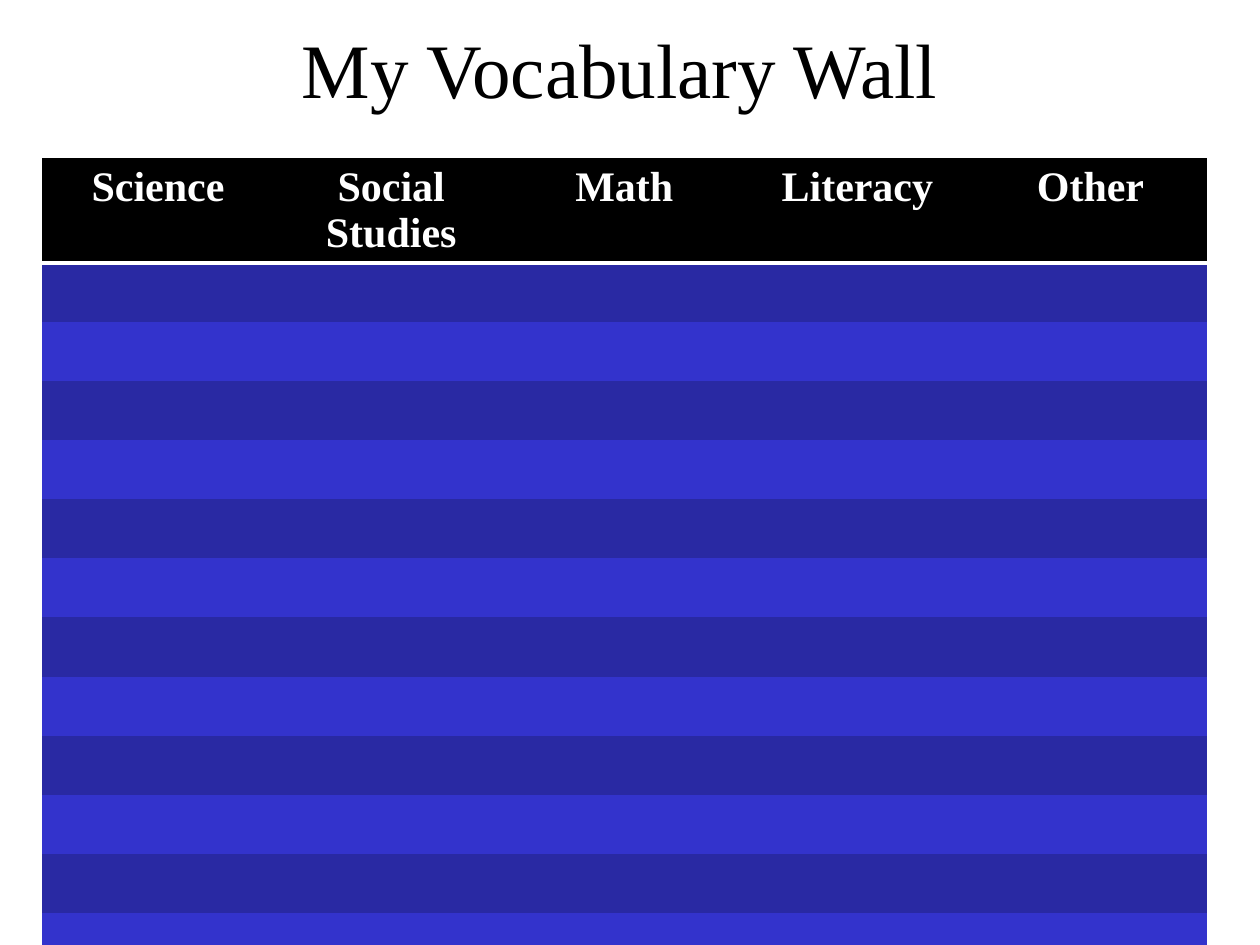
from lxml import etree
from pptx import Presentation
from pptx.dml.color import RGBColor
from pptx.enum import text
from pptx.oxml import ns
from pptx.util import Inches, Pt

BLACK = RGBColor(0x00, 0x00, 0x00)
WHITE = RGBColor(0xFF, 0xFF, 0xFF)
DARK_BLUE = RGBColor(0x29, 0x29, 0xA3)
BLUE = RGBColor(0x33, 0x33, 0xCC)
FONT = "Times New Roman"
NO_STYLE = "{2D5ABB26-0587-4C30-8999-92F81FD0307C}"
SUBJECTS = ["Science", "Social Studies", "Math", "Literacy", "Other"]
ROWS = 15


def write(frame, words, size=24, color=BLACK, bold=False):
    para = frame.paragraphs[0]
    para.alignment = text.PP_ALIGN.CENTER
    span = para.add_run()
    span.text = words
    span.font.name = FONT
    span.font.size = Pt(size)
    span.font.bold = bold
    span.font.color.rgb = color


deck = Presentation()
deck.slide_width, deck.slide_height = Inches(10), Inches(7.5)
page = deck.slides.add_slide(deck.slide_layouts[5])

# Title
title = page.shapes.title
title.left, title.top = Inches(0.67), Inches(0)
title.width, title.height = Inches(8.5), Inches(1.08)
title.text_frame.vertical_anchor = text.MSO_ANCHOR.MIDDLE
write(title.text_frame, "My Vocabulary Wall", size=44)

# Vocabulary table without a built-in style
frame = page.shapes.add_table(ROWS, len(SUBJECTS), Inches(0.33), Inches(1.25),
                              Inches(9.25), Inches(6))
table = frame.table
table.horz_banding = False
frame._element.find(".//" + ns.qn("a:tableStyleId")).text = NO_STYLE
for column in table.columns:
    column.width = Inches(1.85)
for row in table.rows:
    row.height = Inches(0.39)

# Header row with a white rule below
for cell, subject in zip(table.rows[0].cells, SUBJECTS):
    cell.fill.solid()
    cell.fill.fore_color.rgb = BLACK
    write(cell.text_frame, subject, color=WHITE, bold=True)
    rule = etree.Element(ns.qn("a:lnB"), w=str(Pt(2)))
    fill = etree.SubElement(rule, ns.qn("a:solidFill"))
    etree.SubElement(fill, ns.qn("a:srgbClr"), val=str(WHITE))
    cell._tc.get_or_add_tcPr().insert(0, rule)

# Empty rows in alternating blues, sized for 24 pt entries
for number in range(1, ROWS):
    for cell in table.rows[number].cells:
        cell.fill.solid()
        cell.fill.fore_color.rgb = DARK_BLUE if number % 2 else BLUE
        para = cell.text_frame.paragraphs[0]
        end = etree.SubElement(para._p, ns.qn("a:endParaRPr"), sz="2400")
        etree.SubElement(end, ns.qn("a:latin"), typeface=FONT)

deck.save("out.pptx")
